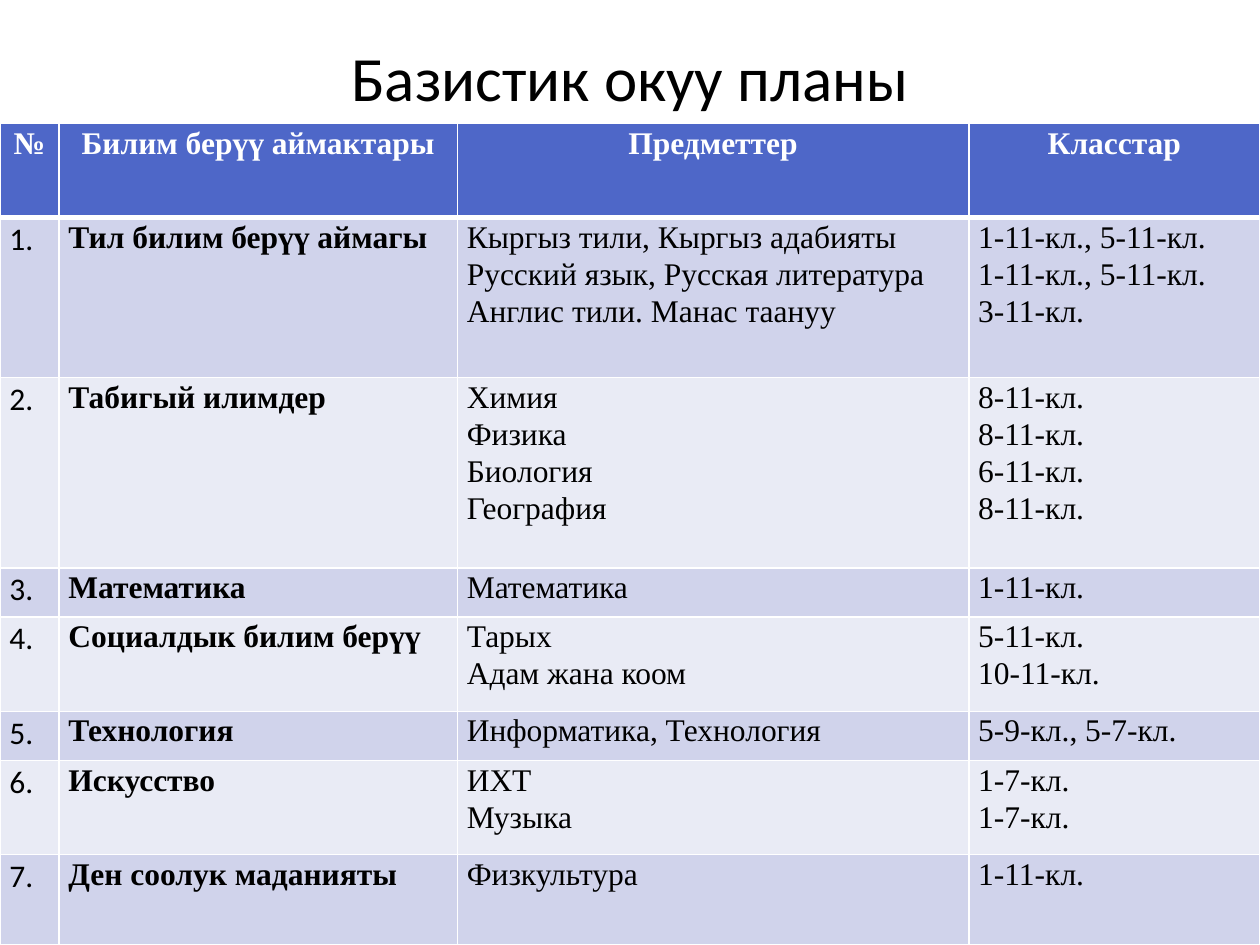
from dataclasses import dataclass

from lxml import etree
from pptx import Presentation
from pptx import util as u
from pptx.dml.color import RGBColor
from pptx.enum import text
from pptx.oxml.ns import qn


@dataclass(frozen=True)
class Theme:
    title_font: str = "Calibri"
    table_font: str = "Times New Roman"
    title_size: int = 36
    table_size: int = 18
    line_spacing: float = 1.07
    ink: str = "000000"
    white: str = "FFFFFF"
    header: str = "4E67C8"
    bands: tuple = ("D0D3EB", "E9EBF5")
    thin: float = 1
    thick: float = 3


class PlanSlide:
    def __init__(self, deck, theme):
        self.theme = theme
        self.slide = deck.slides.add_slide(deck.slide_layouts[5])

    def style(self, paragraph, font, size, color, align, bold=False):
        paragraph.alignment = align
        paragraph.font.name = font
        paragraph.font.size = u.Pt(size)
        paragraph.font.bold = bold
        paragraph.font.color.rgb = RGBColor.from_string(color)

    def title(self, wording, left, top, width, height):
        heading = self.slide.shapes.title
        heading.left, heading.top = u.Cm(left), u.Cm(top)
        heading.width, heading.height = u.Cm(width), u.Cm(height)
        frame = heading.text_frame
        frame.text = wording
        frame.auto_size = text.MSO_AUTO_SIZE.NONE
        frame.vertical_anchor = text.MSO_ANCHOR.MIDDLE
        t = self.theme
        self.style(frame.paragraphs[0], t.title_font, t.title_size, t.ink,
                   text.PP_ALIGN.CENTER)

    def borders(self, cell, top, bottom):
        properties = cell._tc.get_or_add_tcPr()
        widths = {"lnL": self.theme.thin, "lnR": self.theme.thin,
                  "lnT": top, "lnB": bottom}
        for side, width in widths.items():
            line = etree.SubElement(properties, qn(f"a:{side}"), w=str(u.Pt(width)))
            fill = etree.SubElement(line, qn("a:solidFill"))
            etree.SubElement(fill, qn("a:srgbClr"), val=self.theme.white)

    def cell(self, cell, wording, row, column):
        t = self.theme
        is_header = row == 0
        self.borders(cell, t.thick if row == 1 else t.thin,
                     t.thick if is_header else t.thin)
        cell.fill.solid()
        background = t.header if is_header else t.bands[(row - 1) % 2]
        cell.fill.fore_color.rgb = RGBColor.from_string(background)
        cell.margin_left = cell.margin_right = u.Cm(0.19)
        cell.margin_top = cell.margin_bottom = 0

        is_number = column == 0 and not is_header
        cell.text = wording
        for paragraph in cell.text_frame.paragraphs:
            self.style(paragraph,
                       t.title_font if is_number else t.table_font,
                       t.table_size,
                       t.white if is_header else t.ink,
                       text.PP_ALIGN.CENTER if is_header else text.PP_ALIGN.JUSTIFY,
                       bold=is_header or column == 1)
            paragraph.line_spacing = t.line_spacing

    def table(self, rows, left, top, widths, heights):
        plan = self.slide.shapes.add_table(
            len(rows), len(widths), u.Cm(left), u.Cm(top),
            u.Cm(sum(widths)), u.Cm(sum(heights))).table
        for column, width in zip(plan.columns, widths):
            column.width = u.Cm(width)
        for row, height in zip(plan.rows, heights):
            row.height = u.Cm(height)
        for r, wordings in enumerate(rows):
            for c, wording in enumerate(wordings):
                self.cell(plan.cell(r, c), wording, r, c)


HEADER = ("№", "Билим берүү аймактары", "Предметтер", "Класстар")

# Learning area, subjects, grades
AREAS = [
    ("Тил билим берүү аймагы",
     "Кыргыз тили, Кыргыз адабияты\nРусский язык, Русская литература\n"
     "Англис тили. Манас таануу",
     "1-11-кл., 5-11-кл.\n1-11-кл., 5-11-кл.\n3-11-кл."),
    ("Табигый илимдер", "Химия\nФизика\nБиология\nГеография",
     "8-11-кл.\n8-11-кл.\n6-11-кл.\n8-11-кл."),
    ("Математика", "Математика", "1-11-кл."),
    ("Социалдык билим берүү", "Тарых\nАдам жана коом", "5-11-кл.\n10-11-кл."),
    ("Технология", "Информатика, Технология", "5-9-кл., 5-7-кл."),
    ("Искусство", "ИХТ\nМузыка", "1-7-кл.\n1-7-кл."),
    ("Ден соолук маданияты", "Физкультура", "1-11-кл."),
]


def main():
    deck = Presentation()
    deck.slide_width, deck.slide_height = u.Cm(25.4), u.Cm(19.05)
    page = PlanSlide(deck, Theme())

    # Heading
    page.title("Базистик окуу планы", 1.27, 0.76, 22.86, 1.55)

    # Curriculum table, areas numbered from one
    numbered = [(f"{n}.", *area) for n, area in enumerate(AREAS, 1)]
    page.table([HEADER, *numbered], 0, 2.49,
               widths=[1.19, 8.03, 10.31, 5.87],
               heights=[1.9, 3.22, 3.84, 0.99, 1.9, 0.99, 1.9, 1.82])

    deck.save("out.pptx")


if __name__ == "__main__":
    main()
